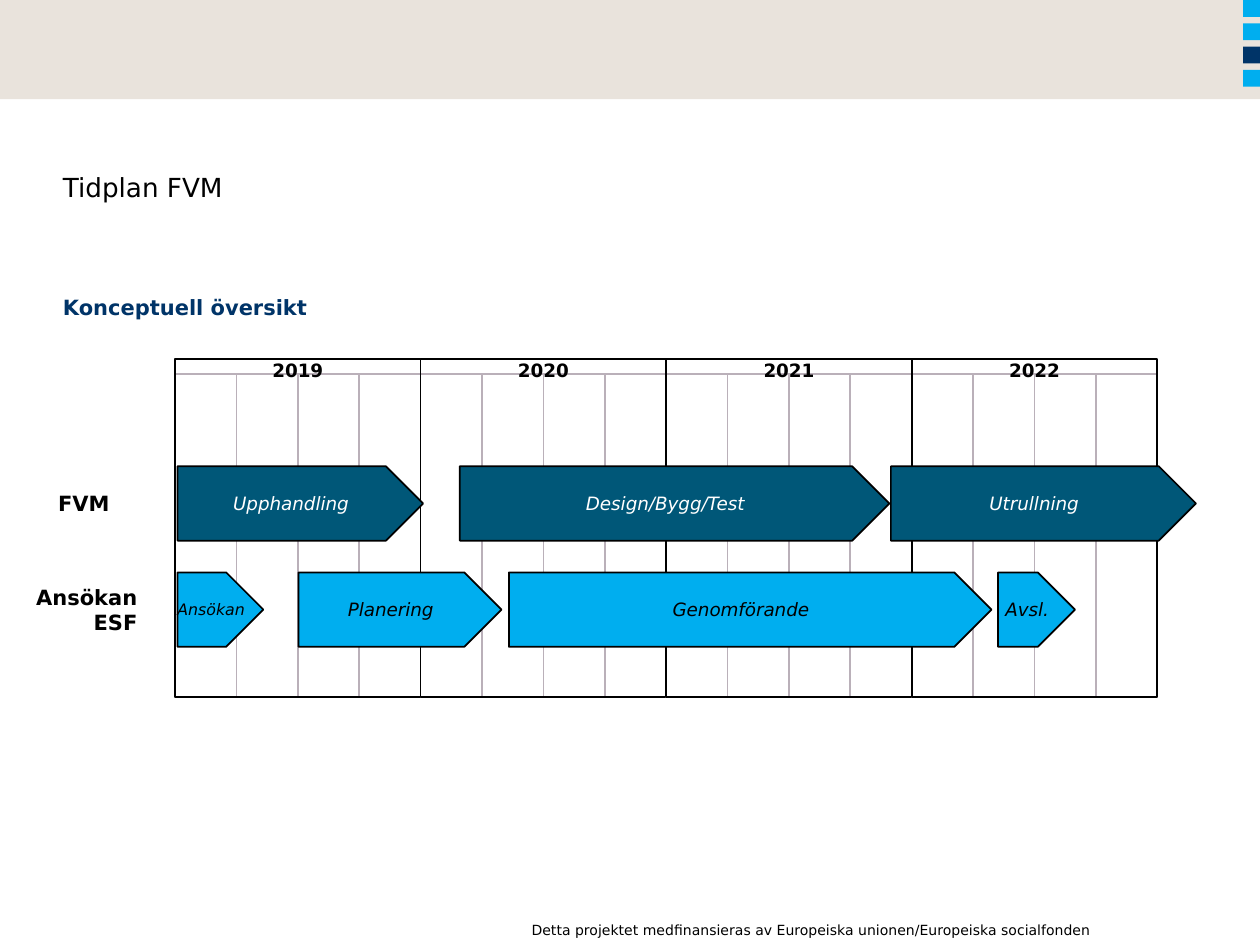
"""Build the FVM timeline slide."""
from pptx import Presentation
from pptx.dml.color import RGBColor
from pptx.enum.shapes import MSO_SHAPE as Shape
from pptx.enum.text import MSO_ANCHOR as Anchor, PP_ALIGN as Align
from pptx.util import Cm, Pt

FONT = "DejaVu Sans"
COLORS = {
    "band": "E9E3DC", "sky": "00AEEF", "navy": "003468", "teal": "005778",
    "grid": "BAB0B9", "black": "000000", "white": "FFFFFF",
}
TITLE = "Tidplan FVM"
SUBTITLE = "Konceptuell översikt"
FOOTER = "Detta projektet medfinansieras av Europeiska unionen/Europeiska socialfonden"
MARKERS = ["sky", "sky", "navy", "sky"]
YEARS = ["2019", "2020", "2021", "2022"]
ROWS = [
    {"label": "FVM", "label_right": 2.36, "top": 9.4, "fill": "teal", "ink": "white",
     "phases": [("Design/Bygg/Test", 9.27, 8.66, 10.5),
                ("Utrullning", 17.96, 6.15, 10.5),
                ("Upphandling", 3.58, 4.95, 10.5)]},
    {"label": "Ansökan ESF", "label_right": 2.92, "top": 11.54, "fill": "sky", "ink": "black",
     "phases": [("Ansökan", 3.58, 1.73, 9),
                ("Planering", 6.02, 4.09, 10.5),
                ("Genomförande", 10.26, 9.73, 10.5),
                ("Avsl.", 20.12, 1.55, 10.5)]},
]

SLIDE_WIDTH, SLIDE_HEIGHT = 25.4, 19.05
GRID_LEFT, YEAR_TOP, QUARTER_TOP, GRID_BOTTOM = 3.53, 7.24, 7.54, 14.05
YEAR_WIDTH = 4.95
QUARTER_WIDTH = YEAR_WIDTH / 4
ROW_HEIGHT = 1.5
MARKER_SIZE, MARKER_STEP = 0.34, 0.47


def color(name):
    return RGBColor.from_string(COLORS[name])


def add_box(slide, kind, left, top, width, height, fill=None, line=None):
    box = slide.shapes.add_shape(kind, Cm(left), Cm(top), Cm(width), Cm(height))
    box.shadow.inherit = False
    if fill:
        box.fill.solid()
        box.fill.fore_color.rgb = color(fill)
    else:
        box.fill.background()
    if line:
        box.line.color.rgb = color(line)
        box.line.width = Pt(1)
    else:
        box.line.fill.background()
    return box


def write(box, text, size, ink="black", align=Align.LEFT, anchor=Anchor.TOP,
          insets=(0, 0, 0, 0), wrap=True, bold=False, italic=False):
    frame = box.text_frame
    frame.word_wrap = wrap
    frame.vertical_anchor = anchor
    (frame.margin_left, frame.margin_top,
     frame.margin_right, frame.margin_bottom) = map(Cm, insets)
    para = frame.paragraphs[0]
    para.alignment = align
    span = para.add_run()
    span.text = text
    span.font.name = FONT
    span.font.size = Pt(size)
    span.font.bold = bold
    span.font.italic = italic
    span.font.color.rgb = color(ink)
    return para


def add_text(slide, left, top, width, height, text, size, **style):
    box = slide.shapes.add_textbox(Cm(left), Cm(top), Cm(width), Cm(height))
    return write(box, text, size, **style)


def add_frame(slide):
    add_box(slide, Shape.RECTANGLE, 0, 0, SLIDE_WIDTH, 2, "band")
    for index, fill in enumerate(MARKERS):
        add_box(slide, Shape.RECTANGLE, SLIDE_WIDTH - MARKER_SIZE, index * MARKER_STEP,
                MARKER_SIZE, MARKER_SIZE, fill)
    add_text(slide, 10.19, 18.44, 12.06, 0.61, FOOTER, 8, align=Align.RIGHT,
             insets=(0.25, 0.13, 0.25, 0.13))
    add_text(slide, 1.27, 2.39, 22.86, 1.8, TITLE, 15, anchor=Anchor.BOTTOM,
             insets=(0, 0.1, 0.1, 0.1))
    para = add_text(slide, 1.27, 5.66, 22.86, 0.61, SUBTITLE, 12, ink="navy",
                    insets=(0, 0.13, 0.25, 0.13), bold=True)
    para.line_spacing = 1.3


def add_calendar(slide):
    for index, year in enumerate(YEARS):
        left = GRID_LEFT + index * YEAR_WIDTH
        for quarter in range(4):
            add_box(slide, Shape.RECTANGLE, left + quarter * QUARTER_WIDTH, QUARTER_TOP,
                    QUARTER_WIDTH, GRID_BOTTOM - QUARTER_TOP, line="grid")
        box = add_box(slide, Shape.RECTANGLE, left, YEAR_TOP, YEAR_WIDTH,
                      GRID_BOTTOM - YEAR_TOP, line="black")
        write(box, year, 10.5, align=Align.CENTER, wrap=False, bold=True)


def add_row(slide, row):
    add_text(slide, 0, row["top"], row["label_right"], ROW_HEIGHT, row["label"], 12,
             align=Align.RIGHT, anchor=Anchor.MIDDLE, insets=(0, 0, 0.15, 0), bold=True)
    for name, left, width, size in row["phases"]:
        arrow = add_box(slide, Shape.PENTAGON, left, row["top"], width, ROW_HEIGHT,
                        row["fill"], "black")
        write(arrow, name, size, row["ink"], Align.CENTER, Anchor.MIDDLE,
              wrap=False, italic=True)


def main():
    deck = Presentation()
    deck.slide_width, deck.slide_height = Cm(SLIDE_WIDTH), Cm(SLIDE_HEIGHT)
    page = deck.slides.add_slide(deck.slide_layouts[6])
    add_frame(page)
    add_calendar(page)
    for row in ROWS:
        add_row(page, row)
    deck.save("out.pptx")


if __name__ == "__main__":
    main()
